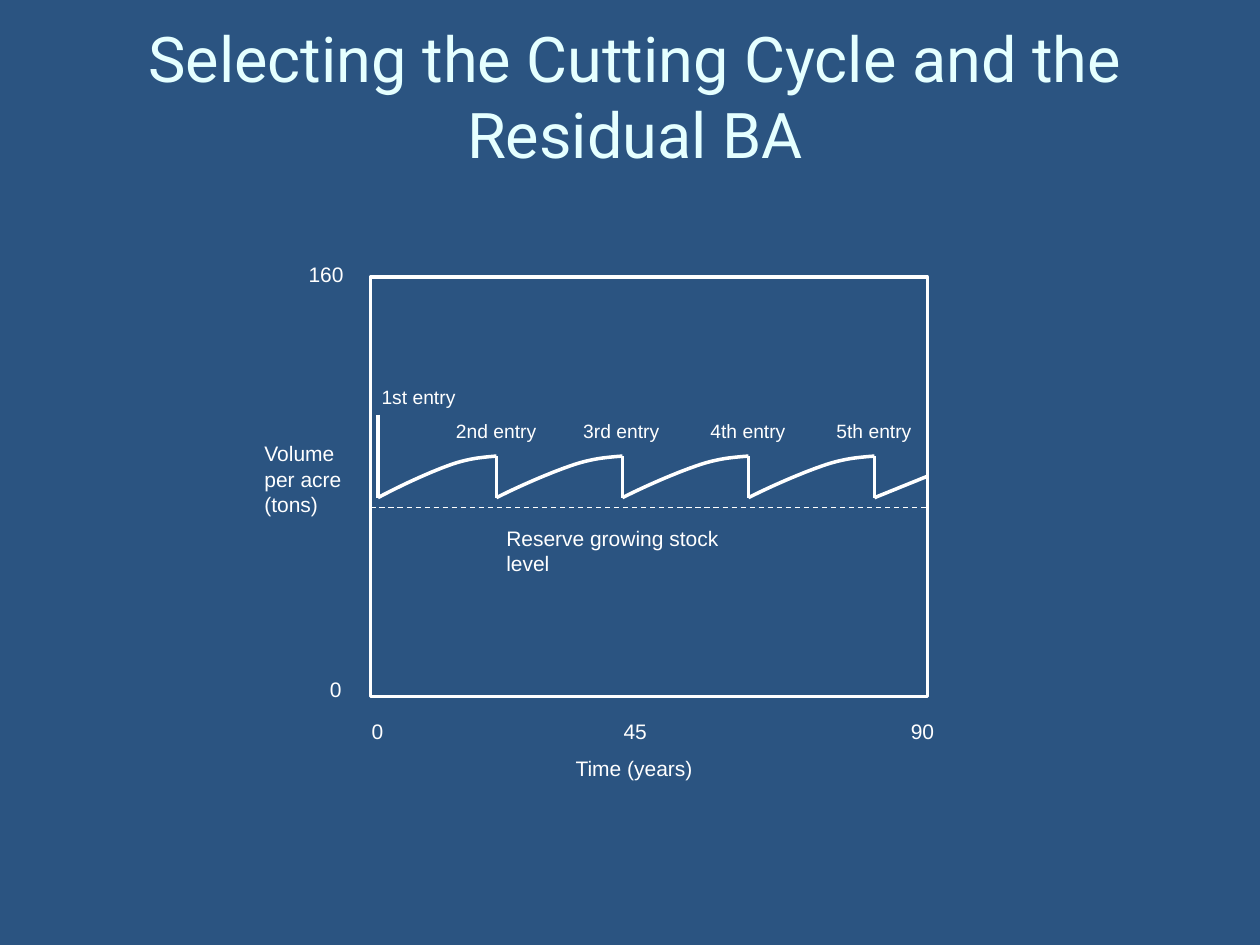
from lxml import etree
from pptx import Presentation
from pptx.dml.color import RGBColor
from pptx.enum.dml import MSO_LINE_DASH_STYLE as DASH
from pptx.enum.shapes import MSO_CONNECTOR, MSO_SHAPE
from pptx.enum.text import MSO_ANCHOR, MSO_AUTO_SIZE, PP_ALIGN
from pptx.oxml.ns import qn
from pptx.util import Inches, Pt

BACKGROUND = RGBColor(0x2B, 0x54, 0x81)
WHITE = RGBColor(0xFF, 0xFF, 0xFF)
TITLE_COLOR = RGBColor(0xE5, 0xFF, 0xFF)

LEFT, RIGHT, TOP, BOTTOM = 2.94, 7.36, 2.2, 5.53
PEAK, RESIDUAL, RESERVE = 3.62, 3.95, 4.03
ENTRIES = [3, 3.94, 4.94, 5.94, 6.94]
ENTRY_LABEL_WIDTH = 0.86
# Two joined cubic curves: x as a share of the cycle, y in inches
GROWTH = [
    [(0, RESIDUAL), (0.2, 3.85), (0.41, 3.76), (0.58, 3.7)],
    [(0.58, 3.7), (0.75, 3.64), (0.87, 3.63), (1, PEAK)],
]
STEPS = 12


def bezier(points, t):
    weights = ((1 - t) ** 3, 3 * t * (1 - t) ** 2, 3 * t * t * (1 - t), t ** 3)
    return tuple(sum(w * v for w, v in zip(weights, axis)) for axis in zip(*points))


class Deck:
    def __init__(self):
        self.prs = Presentation()
        self.prs.slide_width, self.prs.slide_height = Inches(10), Inches(7.5)
        self.s = self.prs.slides.add_slide(self.prs.slide_layouts[6])
        fill = self.s.background.fill
        fill.solid()
        fill.fore_color.rgb = BACKGROUND

    def text(self, lines, x, y, w, h, size=12, font="Arial", color=WHITE,
             align=PP_ALIGN.LEFT, anchor=MSO_ANCHOR.TOP, wrap=False, grow=True):
        tf = self.s.shapes.add_textbox(Inches(x), Inches(y), Inches(w), Inches(h)).text_frame
        tf.word_wrap = wrap
        tf.auto_size = MSO_AUTO_SIZE.SHAPE_TO_FIT_TEXT if grow else MSO_AUTO_SIZE.NONE
        tf.vertical_anchor = anchor
        for i, line in enumerate(lines):
            p = tf.add_paragraph() if i else tf.paragraphs[0]
            p.alignment = align
            r = p.add_run()
            r.text = line
            r.font.size, r.font.name = Pt(size), font
            r.font.color.rgb = color

    def outline(self, sp):
        sp.shadow.inherit = False
        sp.fill.background()
        sp.line.color.rgb = WHITE
        sp.line.width = Pt(2)

    def frame(self, x, y, w, h):
        self.outline(self.s.shapes.add_shape(
            MSO_SHAPE.RECTANGLE, Inches(x), Inches(y), Inches(w), Inches(h)))

    def line(self, x1, y1, x2, y2, width=2, dash=None):
        sp = self.s.shapes.add_connector(
            MSO_CONNECTOR.STRAIGHT, Inches(x1), Inches(y1), Inches(x2), Inches(y2))
        sp.line.color.rgb = WHITE
        sp.line.width = Pt(width)
        if dash:
            sp.line.dash_style = dash
        etree.SubElement(sp.element.spPr, qn("a:effectLst"))

    def growth_curve(self, start, end):
        """Draw regrowth from the residual level to the peak of one cycle."""
        points = [bezier(part, i / STEPS) for part in GROWTH for i in range(1, STEPS + 1)]
        builder = self.s.shapes.build_freeform(Inches(start), Inches(RESIDUAL))
        builder.add_line_segments(
            [(Inches(start + x * (end - start)), Inches(y)) for x, y in points], close=False)
        self.outline(builder.convert_to_shape())


def main():
    deck = Deck()
    deck.text(["Selecting the Cutting Cycle and the Residual BA"], 0.5, 0.17, 9.08, 1.17,
              size=36, font="Roboto", color=TITLE_COLOR, align=PP_ALIGN.CENTER,
              anchor=MSO_ANCHOR.MIDDLE, wrap=True, grow=False)

    deck.frame(LEFT, TOP, RIGHT - LEFT, BOTTOM - TOP)
    for label, x, y, w in [("160", 2.35, 2.03, 0.48), ("0", 2.52, 5.32, 0.29),
                           ("0", 2.85, 5.65, 0.29), ("45", 4.85, 5.65, 0.39),
                           ("90", 7.13, 5.65, 0.39), ("Time (years)", 4.47, 5.95, 1.14)]:
        deck.text([label], x, y, w, 0.3)
    deck.text(["Volume", "per acre", "(tons)"], 2, 3.45, 0.81, 0.7)

    deck.line(LEFT, RESERVE, RIGHT, RESERVE, width=0.75, dash=DASH.DASH)
    deck.text(["Reserve growing stock level"], 3.92, 4.12, 2.2, 0.3, wrap=True)

    for start, end in zip(ENTRIES, ENTRIES[1:]):
        deck.growth_curve(start, end)
        deck.line(end, PEAK, end, RESIDUAL)
    deck.line(ENTRIES[0], 3.29, ENTRIES[0], RESIDUAL)
    deck.line(ENTRIES[-1], RESIDUAL, RIGHT, 3.78)

    for label, x, y in [("1st entry", 2.93, 3.01), ("2nd entry", 3.52, 3.28),
                        ("3rd entry", 4.53, 3.28), ("4th entry", 5.54, 3.28),
                        ("5th entry", 6.54, 3.28)]:
        deck.text([label], x, y, ENTRY_LABEL_WIDTH, 0.28, size=11)

    deck.prs.save("out.pptx")


if __name__ == "__main__":
    main()
